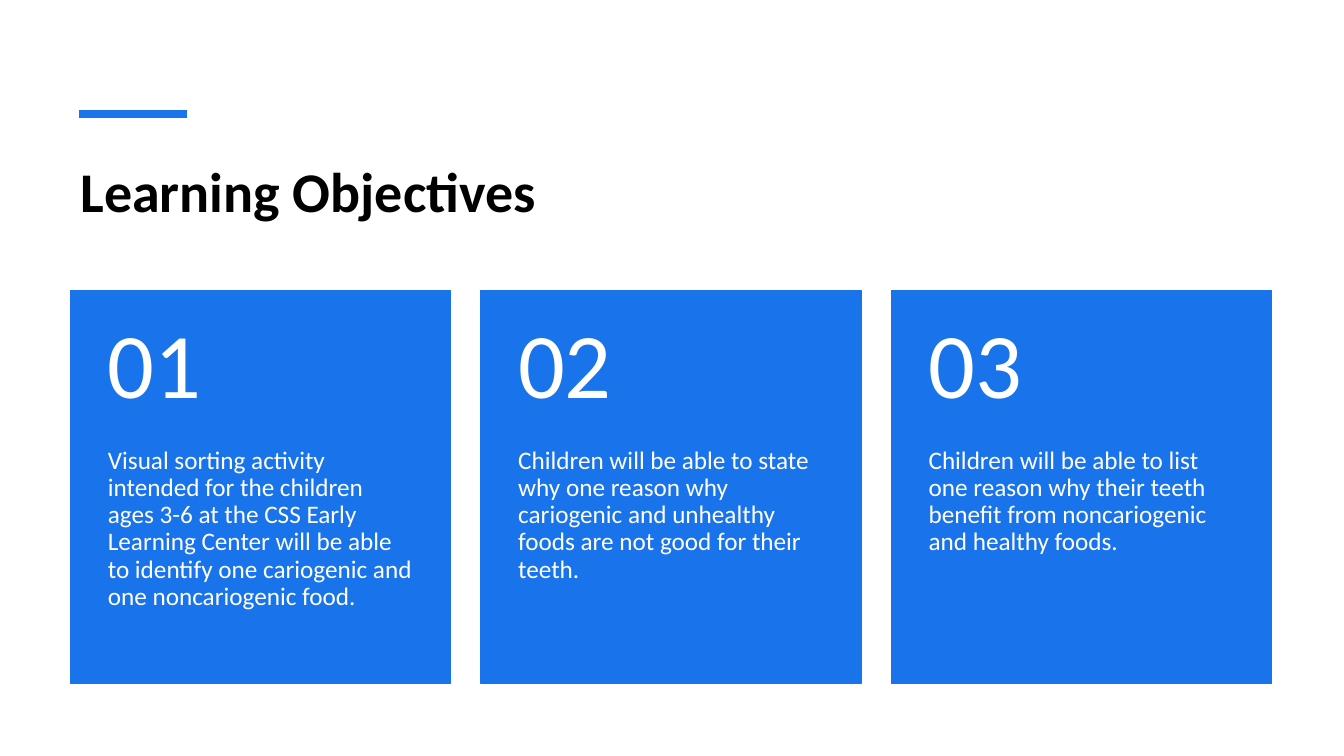
from dataclasses import dataclass

from lxml import etree
from pptx import Presentation
from pptx import util as u
from pptx.dml.color import RGBColor
from pptx.enum import shapes, text
from pptx.oxml import ns

PX = 9144
BLUE = RGBColor(0x19, 0x73, 0xEB)
BLACK = RGBColor(0, 0, 0)
WHITE = RGBColor(255, 255, 255)
FONT = "Calibri"

CARD_LEFT, CARD_TOP = 70, 288
CARD_WIDTH, CARD_HEIGHT = 377, 390
CARD_STEP = 407
NUMBER_HEIGHT = 156


@dataclass(frozen=True)
class Objective:
    number: str
    wording: str


OBJECTIVES = [
    Objective("01", "Visual sorting activity intended for the children ages 3-6 at the CSS "
                    "Early Learning Center will be able to identify one cariogenic and one "
                    "noncariogenic food."),
    Objective("02", "Children will be able to state why one reason why cariogenic and "
                    "unhealthy foods are not good for their teeth."),
    Objective("03", "Children will be able to list one reason why their teeth benefit from "
                    "noncariogenic and healthy foods."),
]


def px(length: int) -> u.Emu:
    return u.Emu(length * PX)


def add_text(page, wording: str, *, left: int, top: int, width: int, height: int,
             size: int, color: RGBColor, bold: bool = False, spacing: float = 1.0,
             anchor=text.MSO_ANCHOR.TOP, insets=(10, 5, 10, 5)) -> None:
    box = page.shapes.add_textbox(px(left), px(top), px(width), px(height))
    frame = box.text_frame
    frame.word_wrap = True
    frame.vertical_anchor = anchor
    frame.margin_left, frame.margin_top, frame.margin_right, frame.margin_bottom = map(px, insets)
    para = frame.paragraphs[0]
    para.line_spacing = spacing
    span = para.add_run()
    span.text = wording
    span.font.name = FONT
    span.font.size = u.Pt(size)
    span.font.bold = bold
    span.font.color.rgb = color


def add_accent(page) -> None:
    accent = page.shapes.add_connector(shapes.MSO_CONNECTOR.STRAIGHT,
                                       px(78), px(113), px(185), px(113))
    accent.line.color.rgb = BLUE
    accent.line.width = u.Pt(6)
    etree.SubElement(accent._element.spPr, ns.qn("a:effectLst"))


def add_card(page, objective: Objective, left: int) -> None:
    card = page.shapes.add_shape(shapes.MSO_SHAPE.RECTANGLE, px(left), px(CARD_TOP),
                                 px(CARD_WIDTH), px(CARD_HEIGHT))
    card.shadow.inherit = False
    card.fill.solid()
    card.fill.fore_color.rgb = BLUE
    card.line.color.rgb = BLUE
    card.line.width = u.Pt(1)
    add_text(page, objective.wording, left=left, top=CARD_TOP + NUMBER_HEIGHT,
             width=CARD_WIDTH, height=CARD_HEIGHT - NUMBER_HEIGHT,
             size=18, color=WHITE, spacing=0.9, insets=(37, 0, 37, 36))
    add_text(page, objective.number, left=left, top=CARD_TOP,
             width=CARD_WIDTH, height=NUMBER_HEIGHT, size=66, color=WHITE,
             spacing=0.9, anchor=text.MSO_ANCHOR.MIDDLE, insets=(37, 18, 37, 18))


def main() -> None:
    deck = Presentation()
    deck.slide_width, deck.slide_height = px(1333), px(750)
    page = deck.slides.add_slide(deck.slide_layouts[6])
    add_accent(page)
    add_text(page, "Learning Objectives", left=70, top=150, width=1191, height=120,
             size=40, color=BLACK, bold=True)
    for index, objective in enumerate(OBJECTIVES):
        add_card(page, objective, CARD_LEFT + index * CARD_STEP)
    deck.save("out.pptx")


if __name__ == "__main__":
    main()
